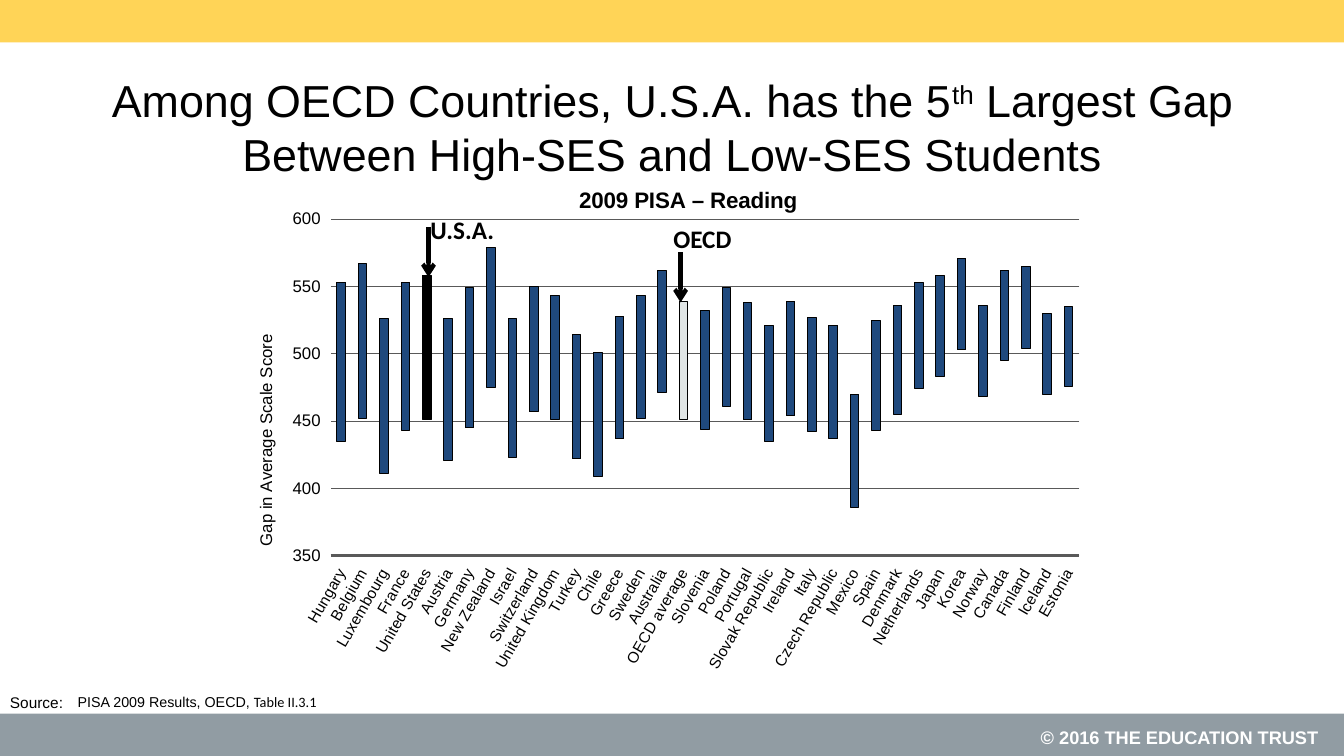
from lxml import etree
from pptx import Presentation
from pptx.chart.data import CategoryChartData
from pptx.dml.color import RGBColor
from pptx.enum.chart import XL_CHART_TYPE, XL_TICK_LABEL_POSITION, XL_TICK_MARK
from pptx.enum.shapes import MSO_CONNECTOR, MSO_SHAPE
from pptx.enum.text import MSO_ANCHOR, MSO_AUTO_SIZE, PP_ALIGN
from pptx.oxml.ns import qn
from pptx.util import Inches, Pt

STACKED = XL_CHART_TYPE.COLUMN_STACKED
LABELS_LOW = XL_TICK_LABEL_POSITION.LOW
NO_TICK, TICK_OUT = XL_TICK_MARK.NONE, XL_TICK_MARK.OUTSIDE
STRAIGHT, RECTANGLE = MSO_CONNECTOR.STRAIGHT, MSO_SHAPE.RECTANGLE
TOP, MIDDLE, NO_FIT = MSO_ANCHOR.TOP, MSO_ANCHOR.MIDDLE, MSO_AUTO_SIZE.NONE
LEFT, CENTER, RIGHT = PP_ALIGN.LEFT, PP_ALIGN.CENTER, PP_ALIGN.RIGHT

COLORS = {
    "black": "000000", "white": "FFFFFF", "yellow": "FFD457", "gray": "919CA3",
    "navy": "1F497D", "pale": "E0E5E5", "grid": "595959",
}

SCORES = [
    ("Hungary", 435, 118), ("Belgium", 452, 115), ("Luxembourg", 411, 115),
    ("France", 443, 110), ("United States", 451, 107), ("Austria", 421, 105),
    ("Germany", 445, 104), ("New Zealand", 475, 104), ("Israel", 423, 103),
    ("Switzerland", 457, 93), ("United Kingdom", 451, 92), ("Turkey", 422, 92),
    ("Chile", 409, 92), ("Greece", 437, 91), ("Sweden", 452, 91),
    ("Australia", 471, 91), ("OECD average", 451, 88), ("Slovenia", 444, 88),
    ("Poland", 461, 88), ("Portugal", 451, 87), ("Slovak Republic", 435, 86),
    ("Ireland", 454, 85), ("Italy", 442, 85), ("Czech Republic", 437, 84),
    ("Mexico", 386, 84), ("Spain", 443, 82), ("Denmark", 455, 81),
    ("Netherlands", 474, 79), ("Japan", 483, 75), ("Korea", 503, 68),
    ("Norway", 468, 68), ("Canada", 495, 67), ("Finland", 504, 61),
    ("Iceland", 470, 60), ("Estonia", 476, 59),
]
HIGHLIGHTS = {"United States": "black", "OECD average": "pale"}


def color(name):
    return RGBColor.from_string(COLORS[name])


class SlideBuilder:
    font = "Arial"

    def __init__(self, deck):
        self.page = deck.slides.add_slide(deck.slide_layouts[1])

    def style(self, font, size, shade="black", bold=False, name=None):
        font.name = name or self.font
        font.size = Pt(size)
        font.bold = bold
        font.color.rgb = color(shade)

    def span(self, para, text, size, **look):
        span = para.add_run()
        span.text = text
        self.style(span.font, size, **look)
        return span

    def band(self, top):
        def draw(shade):
            box = self.page.shapes.add_shape(RECTANGLE, 0, Inches(top), Inches(13.33), Inches(0.42))
            box.shadow.inherit = False
            box.fill.solid()
            box.fill.fore_color.rgb = color(shade)
            box.line.fill.background()
        return draw

    def label(self, place, text, size, align=LEFT, spacing=None, **look):
        box = self.page.shapes.add_textbox(*map(Inches, place))
        box.text_frame.word_wrap = True
        para = box.text_frame.paragraphs[0]
        para.alignment = align
        if spacing:
            para.line_spacing = Pt(spacing)
        self.span(para, text, size, **look)

    def placeholder(self, index, place, anchor, align):
        box = self.page.placeholders[index]
        box.left, box.top, box.width, box.height = map(Inches, place)
        frame = box.text_frame
        frame.word_wrap = True
        frame.auto_size = NO_FIT
        frame.vertical_anchor = anchor
        para = frame.paragraphs[0]
        para.alignment = align
        para.space_before = Pt(0)
        return para

    def title(self, place, before, raised, after):
        para = self.placeholder(0, place, MIDDLE, CENTER)
        self.span(para, before, 32)
        self.span(para, raised, 32).font._element.set("baseline", "30000")
        self.span(para, after, 32)

    def source(self, place, text, table):
        para = self.placeholder(1, place, TOP, LEFT)
        properties = para._p.get_or_add_pPr()
        properties.set("marL", str(Inches(0.38)))
        properties.set("indent", str(-Inches(0.38)))
        etree.SubElement(properties, qn("a:buNone"))
        self.span(para, text, 10.2)
        self.span(para, table, 10.2, name="Calibri")

    def arrow(self, x, top, bottom):
        line = self.page.shapes.add_connector(STRAIGHT, *map(Inches, (x, top, x, bottom)))
        line.line.color.rgb = color("black")
        line.line.width = Pt(3)
        etree.SubElement(line.line._get_or_add_ln(), qn("a:tailEnd"), type="arrow")
        etree.SubElement(line._element.spPr, qn("a:effectLst"))

    def layout(self, element, index, **values):
        for old in element.findall(qn("c:layout")):
            element.remove(old)
        layout = etree.Element(qn("c:layout"))
        manual = etree.SubElement(layout, qn("c:manualLayout"))
        for key, value in values.items():
            etree.SubElement(manual, qn("c:" + key), val=str(value))
        element.insert(index, layout)

    def chart_title(self, title, text, size, x, y, bold=False):
        self.span(title.text_frame.paragraphs[0], text, size, bold=bold)
        self.layout(title._element, 1, xMode="edge", yMode="edge", x=x, y=y)

    def gap_chart(self, place):
        names, lows, gaps = zip(*SCORES)
        data = CategoryChartData()
        data.categories = names
        data.add_series("Low-SES score", lows)
        data.add_series("Gap", gaps)
        chart = self.page.shapes.add_chart(STACKED, *map(Inches, place), data).chart
        self.style(chart.font, 15.3, bold=True)
        chart.has_legend = False
        self.chart_title(chart.chart_title, "2009 PISA – Reading", 16, 0.39, 0.01, bold=True)
        self.layout(chart._chartSpace.chart.plotArea, 0, layoutTarget="inner", xMode="edge",
                    yMode="edge", x=0.102, y=0.083, w=0.882, h=0.652)
        self.bars(chart.plots[0], names)
        self.axes(chart.category_axis, chart.value_axis)

    def bars(self, plot, names):
        plot.gap_width = 150
        plot.overlap = 100
        plot.vary_by_categories = False
        base, gap = plot.series
        base.format.fill.background()
        base.format.line.fill.background()
        self.bar_format(gap.format, "navy")
        for name, shade in HIGHLIGHTS.items():
            self.bar_format(gap.points[names.index(name)].format, shade)

    def bar_format(self, bar, shade):
        bar.fill.solid()
        bar.fill.fore_color.rgb = color(shade)
        bar.line.color.rgb = color("black")
        bar.line.width = Pt(0.75)

    def axes(self, countries, scores):
        self.style(countries.tick_labels.font, 11)
        countries._element.txPr.find(qn("a:bodyPr")).set("rot", "-3600000")
        countries.tick_label_position = LABELS_LOW
        countries.major_tick_mark = NO_TICK
        countries.format.line.color.rgb = color("grid")
        countries.format.line.width = Pt(2.5)
        self.style(scores.tick_labels.font, 12)
        scores.minimum_scale, scores.maximum_scale, scores.major_unit = 350, 600, 50
        scores.major_tick_mark = TICK_OUT
        scores.format.line.fill.background()
        scores.major_gridlines.format.line.color.rgb = color("grid")
        scores.major_gridlines.format.line.width = Pt(0.75)
        self.chart_title(scores.axis_title, "Gap in Average Scale Score", 12, 0.01, 0.3)
        scores.axis_title.text_frame._txBody.find(qn("a:bodyPr")).set("rot", "-5400000")


def main():
    deck = Presentation()
    deck.slide_width, deck.slide_height = Inches(13.33), Inches(7.5)
    slide = SlideBuilder(deck)
    slide.band(7.08)("gray")
    slide.band(0)("yellow")
    slide.label((9.06, 7.15, 4.11, 0.32), "© 2016 THE EDUCATION TRUST", 13, RIGHT, 16,
                shade="white", bold=True)
    slide.label((0, 6.83, 0.89, 0.29), "Source:", 11)
    slide.title((0.67, 0.67, 12, 1.17), "Among OECD Countries, U.S.A. has the 5", "th",
                " Largest Gap Between High-SES and Low-SES Students")
    slide.gap_chart((2.42, 1.75, 8.42, 5.12))
    slide.source((0.67, 6.83, 7.22, 0.25), "PISA 2009 Results, OECD, ", "Table II.3.1")
    for text, left, top, x in (("U.S.A.", 4.17, 2.08, 4.25), ("OECD", 6.58, 2.17, 6.75)):
        slide.label((left, top, 1, 0.4), text, 18, bold=True, name="Calibri")
        start = 2.25 if text == "U.S.A." else 2.5
        slide.arrow(x, start, start + 0.5)
    deck.save("out.pptx")


if __name__ == "__main__":
    main()
